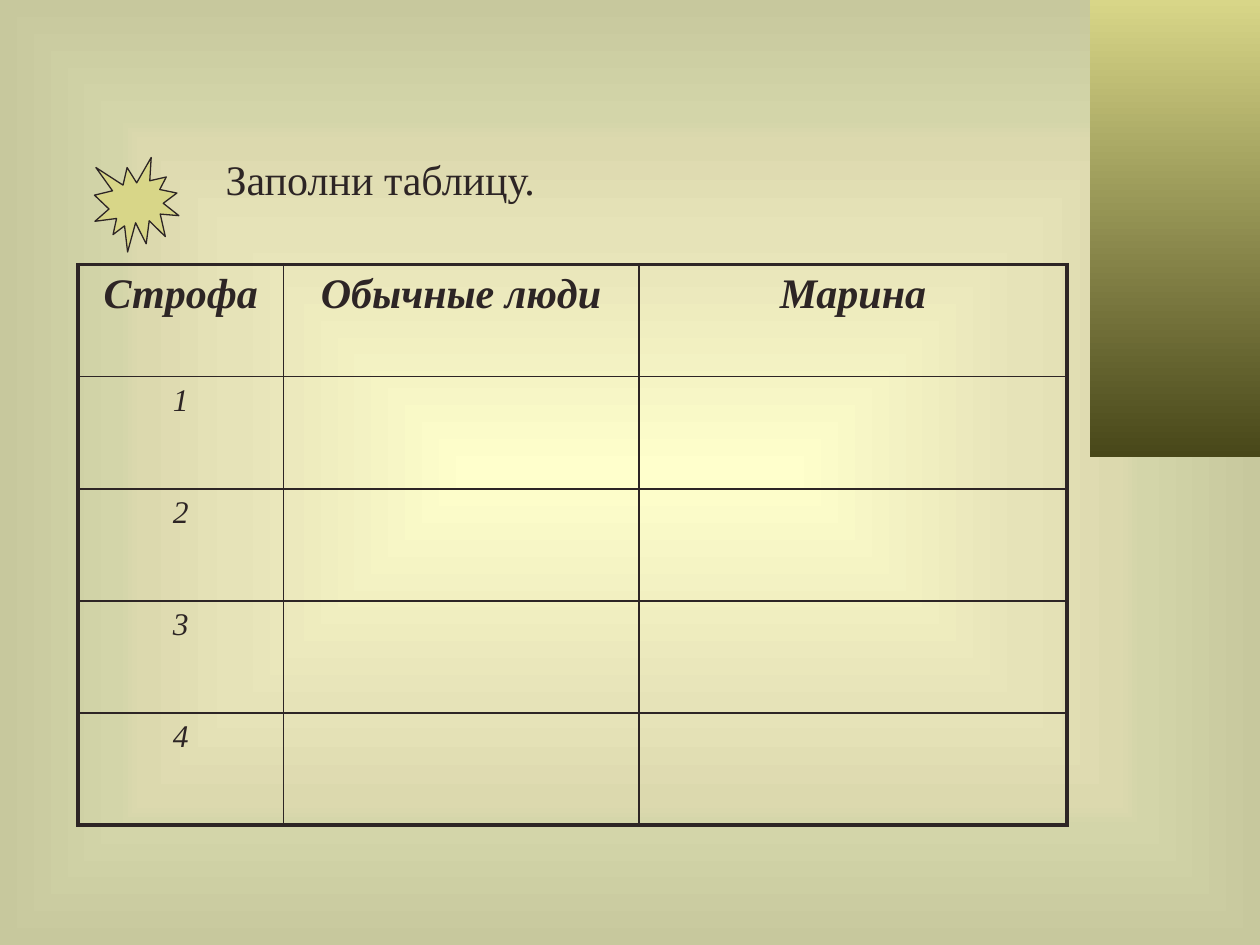
from lxml import etree
from pptx import Presentation
from pptx import util as u
from pptx.dml.color import RGBColor
from pptx.enum import shapes, text
from pptx.oxml import parse_xml
from pptx.oxml.ns import nsdecls, qn

INK, OLIVE, DARK_OLIVE = "2D2525", "D8D688", "484719"
BACKGROUND = [(0, "FFFFCC"), (50, "E6E3B8"), (70, "DCD9AE"),
              (75, "D3D5A9"), (100, "C7C89D")]
HEADERS = ["Строфа", "Обычные люди", "Марина"]
COLUMNS = [1.63, 2.82, 3.4]
STANZAS = 4
ROW_HEIGHT = 0.89
OUTER, INNER = 2.25, 1


def rgb(value):
    return RGBColor.from_string(value)


def box(*lengths):
    return [u.Inches(length) for length in lengths]


class Deck:
    font = {"name": "Times New Roman", "size": u.Pt(24), "bold": False, "italic": False}

    def __init__(self, prs):
        self.s = prs.slides.add_slide(prs.slide_layouts[5])

    def background(self, stops):
        """Fill the slide with a gradient running from its centre to its edges."""
        self.s.background.fill.solid()
        bg = self.s.element.find(".//" + qn("p:bgPr"))
        marks = "".join(f'<a:gs pos="{pos * 1000}"><a:srgbClr val="{color}"/></a:gs>'
                        for pos, color in stops)
        bg.replace(bg[0], parse_xml(
            f'<a:gradFill {nsdecls("a")} rotWithShape="1"><a:gsLst>{marks}</a:gsLst>'
            '<a:path path="rect"><a:fillToRect l="50000" t="50000" r="50000" b="50000"/>'
            '</a:path></a:gradFill>'))

    def shape(self, kind, *place):
        sp = self.s.shapes.add_shape(kind, *box(*place))
        sp.shadow.inherit = False
        return sp

    def side_panel(self, *place):
        sp = self.shape(shapes.MSO_SHAPE.RECTANGLE, *place)
        sp.line.fill.background()
        sp.fill.gradient()
        sp.fill.gradient_angle = 270
        for stop, color, pos in zip(sp.fill.gradient_stops, (OLIVE, DARK_OLIVE), (0, 1)):
            stop.color.rgb = rgb(color)
            stop.position = pos

    def star(self, *place):
        sp = self.shape(shapes.MSO_SHAPE.EXPLOSION1, *place)
        sp.fill.solid()
        sp.fill.fore_color.rgb = rgb(OLIVE)
        sp.line.color.rgb = rgb(INK)
        sp.line.width = u.Pt(0.75)

    def add_words(self, tf, words, align, **changes):
        p = tf.paragraphs[0]
        p.alignment = align
        r = p.add_run()
        r.text = words
        for name, value in {**self.font, **changes}.items():
            setattr(r.font, name, value)
        r.font.color.rgb = rgb(INK)

    def title(self, words, *place):
        sp = self.s.shapes.title
        sp.left, sp.top, sp.width, sp.height = box(*place)
        tf = sp.text_frame
        tf.word_wrap = True
        tf.auto_size = text.MSO_AUTO_SIZE.NONE
        tf.vertical_anchor = text.MSO_ANCHOR.MIDDLE
        self.add_words(tf, words, text.PP_ALIGN.LEFT)

    def borders(self, cell, widths):
        """Draw the left, right, top and bottom lines, ahead of the cell's fill."""
        tcPr = cell._tc.get_or_add_tcPr()
        for i, (side, width) in enumerate(zip("LRTB", widths)):
            ln = etree.Element(qn(f"a:ln{side}"), w=str(u.Pt(width)))
            fill = etree.SubElement(ln, qn("a:solidFill"))
            etree.SubElement(fill, qn("a:srgbClr"), val=INK)
            tcPr.insert(i, ln)

    def table(self, rows, left, top):
        height = ROW_HEIGHT * len(rows)
        table = self.s.shapes.add_table(
            len(rows), len(COLUMNS), *box(left, top, sum(COLUMNS), height)).table
        table.horz_banding = table.first_row = False
        for column, width in zip(table.columns, COLUMNS):
            column.width = u.Inches(width)
        last_row, last_column = len(rows) - 1, len(COLUMNS) - 1
        for i, row in enumerate(rows):
            table.rows[i].height = u.Inches(ROW_HEIGHT)
            look = {"italic": True, "bold": i == 0, "size": u.Pt(18 if i else 24)}
            for j, words in enumerate(row):
                cell = table.cell(i, j)
                cell.fill.background()
                on_edge = (j == 0, j == last_column, i == 0, i == last_row)
                self.borders(cell, [OUTER if edge else INNER for edge in on_edge])
                if words:
                    self.add_words(cell.text_frame, words, text.PP_ALIGN.CENTER, **look)


def main():
    prs = Presentation()
    prs.slide_width, prs.slide_height = box(10, 7.5)
    deck = Deck(prs)
    deck.background(BACKGROUND)
    deck.side_panel(8.65, 0, 1.35, 3.63)
    deck.star(0.75, 1.25, 0.67, 0.75)
    deck.title("Заполни таблицу.", 1.69, 1.17, 5.17, 0.5)
    stanzas = [[str(n), "", ""] for n in range(1, STANZAS + 1)]
    deck.table([HEADERS] + stanzas, 0.62, 2.1)
    prs.save("out.pptx")


if __name__ == "__main__":
    main()
